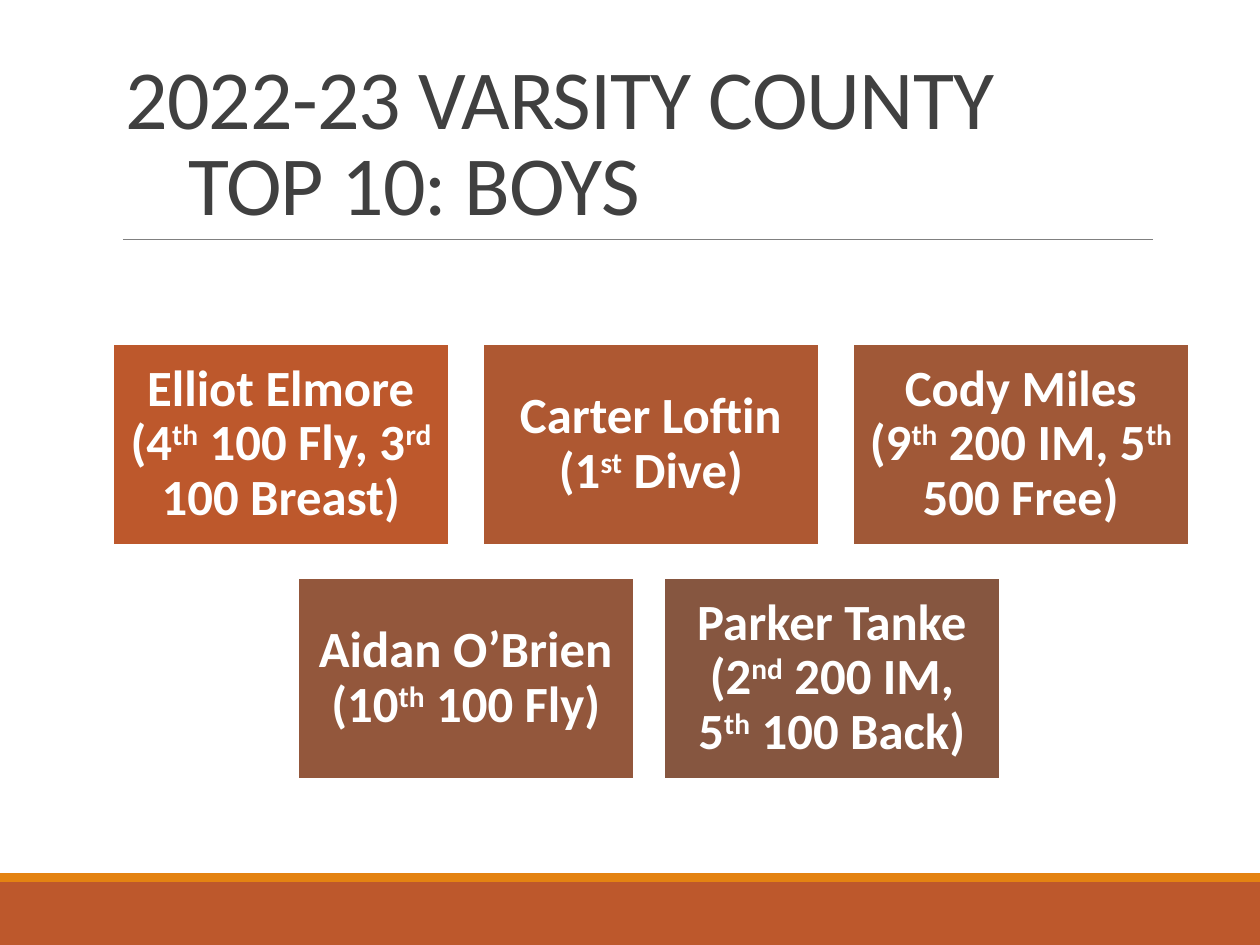
from dataclasses import dataclass

from lxml.etree import SubElement
from pptx import Presentation
from pptx.dml.color import RGBColor
from pptx.enum.shapes import MSO_CONNECTOR, MSO_SHAPE
from pptx.enum.text import MSO_ANCHOR as Anchor, MSO_AUTO_SIZE as AutoSize, PP_ALIGN as Align
from pptx.oxml.ns import qn
from pptx.util import Emu, Pt

PX = 914400 / 126
FONT = "Calibri"

WHITE = RGBColor(0xFF, 0xFF, 0xFF)
TITLE_GREY = RGBColor(0x40, 0x40, 0x40)
RULE_GREY = RGBColor(0x80, 0x80, 0x80)
RUST = RGBColor(0xBD, 0x58, 0x2C)
ORANGE = RGBColor(0xE4, 0x83, 0x12)
CARD_2 = RGBColor(0xAE, 0x58, 0x32)
CARD_3 = RGBColor(0xA0, 0x58, 0x37)
CARD_4 = RGBColor(0x93, 0x57, 0x3C)
CARD_5 = RGBColor(0x86, 0x56, 0x40)

CARD_W, CARD_H = 336, 201
CARD_STEP = 370
ROW_1, ROW_2 = 344, 578
CARD_INSET = 15


@dataclass
class Swimmer:
    left: int
    top: int
    fill: RGBColor
    result: str  # ordinal endings stand between carets


SWIMMERS = [
    Swimmer(113, ROW_1, RUST, "Elliot Elmore (4^th^ 100 Fly, 3^rd^ 100 Breast)"),
    Swimmer(113 + CARD_STEP, ROW_1, CARD_2, "Carter Loftin (1^st^ Dive)"),
    Swimmer(113 + 2 * CARD_STEP, ROW_1, CARD_3, "Cody Miles (9^th^ 200 IM, 5^th^ 500 Free)"),
    Swimmer(298, ROW_2, CARD_4, "Aidan O’Brien (10^th^ 100 Fly)"),
    Swimmer(664, ROW_2, CARD_5, "Parker Tanke (2^nd^ 200 IM, 5^th^ 100 Back)"),
]


def px(length: int) -> Emu:
    return Emu(round(length * PX))


def add_block(slide, left: int, top: int, width: int, height: int, fill: RGBColor):
    block = slide.shapes.add_shape(MSO_SHAPE.RECTANGLE, px(left), px(top), px(width), px(height))
    block.shadow.inherit = False
    block.fill.solid()
    block.fill.fore_color.rgb = fill
    block.line.fill.background()
    return block


def add_run(paragraph, text: str, size: int, color: RGBColor):
    run = paragraph.add_run()
    run.text = text
    run.font.name = FONT
    run.font.size = Pt(size)
    run.font.color.rgb = color
    return run


def add_card(slide, swimmer: Swimmer) -> None:
    card = add_block(slide, swimmer.left, swimmer.top, CARD_W, CARD_H, swimmer.fill)
    card.line.color.rgb = WHITE
    card.line.width = Pt(1.25)
    frame = card.text_frame
    frame.word_wrap = True
    frame.vertical_anchor = Anchor.MIDDLE
    frame.margin_left = frame.margin_right = px(CARD_INSET)
    frame.margin_top = frame.margin_bottom = px(CARD_INSET)
    paragraph = frame.paragraphs[0]
    paragraph.alignment = Align.CENTER
    paragraph.line_spacing = 0.9
    for index, part in enumerate(swimmer.result.split("^")):
        run = add_run(paragraph, part, 29, WHITE)
        run.font.bold = True
        if index % 2:
            run.font._element.set("baseline", "30000")


def add_rule(slide, left: int, right: int, y: int) -> None:
    rule = slide.shapes.add_connector(MSO_CONNECTOR.STRAIGHT, px(left), px(y), px(right), px(y))
    rule.line.color.rgb = RULE_GREY
    rule.line.width = Pt(0.5)
    SubElement(rule._element.spPr, qn("a:effectLst"))


def fill_title(title) -> None:
    title.left, title.top, title.width, title.height = px(113), px(39), px(1040), px(200)
    frame = title.text_frame
    frame.word_wrap = True
    frame.auto_size = AutoSize.NONE
    frame.vertical_anchor = Anchor.BOTTOM
    heading = frame.paragraphs[0]
    heading.alignment = Align.LEFT
    heading.line_spacing = 0.85
    first = add_run(heading, "2022-23 VARSITY COUNTY ", 48, TITLE_GREY)
    heading.add_line_break()
    second = add_run(heading, "\tTOP 10: BOYS", 48, TITLE_GREY)
    for run in (first, second):
        run.font._element.set("spc", "-50")


def main() -> None:
    deck = Presentation()
    deck.slide_width, deck.slide_height = px(1260), px(945)
    slide = deck.slides.add_slide(deck.slide_layouts[5])

    # Footer bands and title rule
    add_block(slide, 0, 882, 1260, 63, RUST)
    add_block(slide, 0, 873, 1260, 9, ORANGE)
    add_rule(slide, 123, 1153, 239)

    # Title and swimmers
    fill_title(slide.shapes.title)
    for swimmer in SWIMMERS:
        add_card(slide, swimmer)

    deck.save("out.pptx")


if __name__ == "__main__":
    main()
